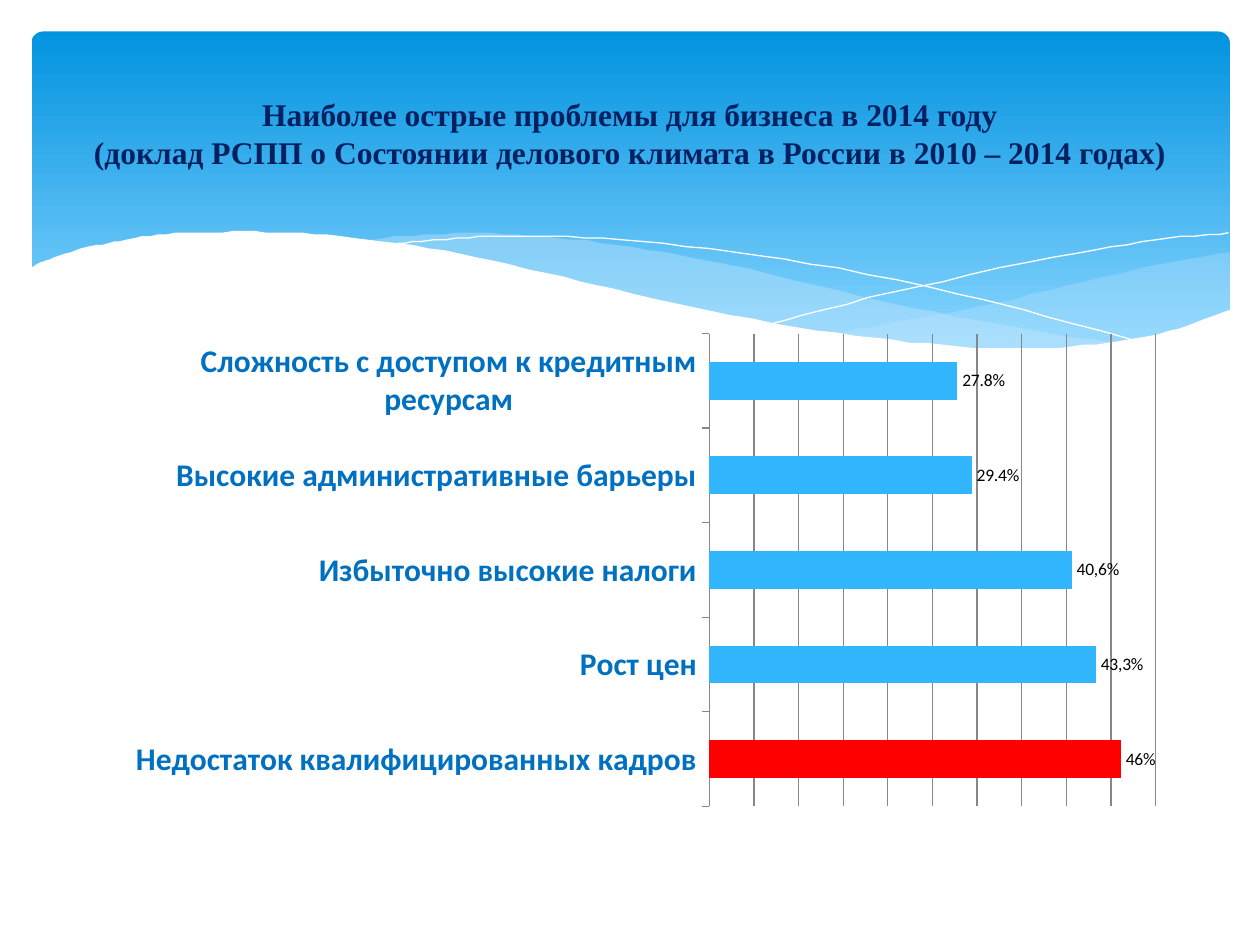
from dataclasses import dataclass
from typing import Optional

from lxml.etree import SubElement
from pptx import Presentation
from pptx.chart.data import CategoryChartData
from pptx.dml.color import RGBColor
from pptx.enum.chart import XL_CHART_TYPE, XL_LABEL_POSITION, XL_TICK_LABEL_POSITION, XL_TICK_MARK
from pptx.enum.shapes import MSO_SHAPE
from pptx.enum.text import MSO_ANCHOR, PP_ALIGN
from pptx.oxml.ns import qn
from pptx.util import Pt

Point = tuple[float, float]


@dataclass(frozen=True)
class Theme:
    header_top: str = "0293E0"
    header_bottom: str = "83D3FE"
    wave: str = "C6E7FC"
    white: str = "FFFFFF"
    title: str = "002060"
    category: str = "0070C0"
    bar: str = "31B6FD"
    highlight: str = "FF0000"
    label: str = "000000"
    grid: str = "878787"
    title_font: str = "Times New Roman"
    chart_font: str = "Calibri"
    heading_size: int = 18
    label_size: int = 10


@dataclass(frozen=True)
class Wave:
    """Smooth edges joined at sharp corners; without a fill it is an open line."""
    edges: list[list[Point]]
    fill: Optional[str] = None
    opacity: int = 100


@dataclass(frozen=True)
class Problem:
    name: str
    share: float
    label: Optional[str] = None
    highlighted: bool = False


THEME = Theme()

WAVES = [
    Wave([[(702.7, 144), (663, 151.2), (620, 160.6), (579.6, 170.6), (542, 178.6),
           (508, 185), (476, 190.8)],
          [(476, 190.8), (497.5, 193.7), (527, 197.3), (553.7, 199.4), (586, 200.2),
           (615, 198.7), (640, 195.8), (663, 190.8), (683, 185), (702.7, 177.8)]],
         THEME.wave, 29),
    Wave([[(643, 196.6), (602.6, 190.8), (558, 182.9), (508, 172.8), (453, 159.8),
           (409.7, 149.8), (370, 142.6), (334.8, 137.5), (302.4, 134.6), (273.6, 133.2),
           (247.7, 133.9), (225.4, 135.4), (206, 137.5)],
          [(206, 137.5), (246, 143.3), (291, 151.9), (323, 159.8), (381.6, 172.8),
           (432.7, 183.6), (478.8, 191.5), (520, 197.3), (556.6, 199.4), (589, 200.2),
           (617, 199.4), (643, 196.6)]],
         THEME.wave, 40),
    Wave([[(222.5, 140.4), (236, 138.2), (261.4, 136.1), (288.7, 134.6), (324, 135.4),
           (367, 138.2), (419, 144), (478.8, 153.4), (547, 167.8), (598, 180.7),
           (653, 195.8)]]),
    Wave([[(441.4, 185), (483.8, 173.5), (538.6, 160.6), (602, 146.9), (644.4, 139.7),
           (675.4, 135.4), (702, 133.2)]]),
    Wave([[(703.4, 177.1), (684, 184.3), (662.4, 190.8), (638.6, 195.1), (612, 198),
           (582.5, 199.4), (548, 198), (510, 194.4), (466.6, 188.6), (417, 180),
           (362, 167.8), (322, 158.4), (281.5, 149), (244.8, 141.8), (210, 136.8),
           (180, 133.9), (152, 132.5), (127.4, 132.5), (105, 133.2), (85.7, 134.6),
           (68.4, 137.5), (54.7, 140.4), (37.4, 144.7), (26, 149), (16.6, 153.4)],
          [(16.6, 236.9)], [(703.4, 236.9)]],
         THEME.white),
]

PROBLEMS = [
    Problem("Недостаток квалифицированных кадров", 0.461, "46%", True),
    Problem("Рост цен", 0.433, "43,3%"),
    Problem("Избыточно высокие налоги", 0.406, "40,6%"),
    Problem("Высокие административные барьеры", 0.294),
    Problem("Сложность с доступом к кредитным ресурсам", 0.278),
]

TITLE_LINES = [
    "Наиболее острые проблемы для бизнеса в 2014 году",
    "(доклад РСПП о Состоянии делового климата в России в 2010 – 2014 годах)",
]


def color(value: str) -> RGBColor:
    return RGBColor.from_string(value)


def smooth(edge: list[Point], steps: int = 4) -> list[Point]:
    """Interpolate an edge with a Catmull-Rom spline."""
    padded = [edge[0], *edge, edge[-1]]
    points = [edge[0]]
    for a, b, c, d in zip(padded, padded[1:], padded[2:], padded[3:]):
        for step in range(1, steps + 1):
            t = step / steps
            x, y = (
                (2 * q + (r - p) * t + (2 * p - 5 * q + 4 * r - s) * t**2
                 + (3 * q - p - 3 * r + s) * t**3) / 2
                for p, q, r, s in zip(a, b, c, d)
            )
            points.append((x, y))
    return points


def draw_header(slide) -> None:
    shape = slide.shapes.add_shape(
        MSO_SHAPE.ROUNDED_RECTANGLE, Pt(18), Pt(18), Pt(684.7), Pt(194.4))
    shape.adjustments[0] = 0.034
    shape.shadow.inherit = False
    shape.line.fill.background()
    shape.fill.gradient()
    shape.fill.gradient_angle = 270
    stops = zip(shape.fill.gradient_stops, (THEME.header_top, THEME.header_bottom), (0, 0.9))
    for stop, stop_color, position in stops:
        stop.color.rgb = color(stop_color)
        stop.position = position


def draw_wave(slide, wave: Wave) -> None:
    points = [point for edge in wave.edges for point in smooth(edge)]
    builder = slide.shapes.build_freeform(*points[0], scale=Pt(1))
    builder.add_line_segments(points[1:], close=wave.fill is not None)
    shape = builder.convert_to_shape()
    shape.shadow.inherit = False
    if wave.fill is None:
        shape.fill.background()
        shape.line.color.rgb = color(THEME.white)
        shape.line.width = Pt(0)
        return
    shape.line.fill.background()
    shape.fill.solid()
    shape.fill.fore_color.rgb = color(wave.fill)
    if wave.opacity < 100:
        fill_color = shape.element.spPr.find(qn("a:solidFill"))[0]
        SubElement(fill_color, qn("a:alpha"), val=str(wave.opacity * 1000))


def draw_chart(slide, problems: list[Problem]) -> None:
    data = CategoryChartData(number_format="0.0%")
    data.categories = [problem.name for problem in problems]
    data.add_series("Series 1", [problem.share for problem in problems])
    chart = slide.shapes.add_chart(
        XL_CHART_TYPE.BAR_CLUSTERED, Pt(65.5), Pt(185), Pt(607), Pt(281.5), data).chart
    chart.has_legend = False
    chart.has_title = False
    chart.font.name = THEME.chart_font
    chart.font.size = Pt(THEME.label_size)
    chart.font.color.rgb = color(THEME.label)

    category_axis = chart.category_axis
    category_axis.major_tick_mark = XL_TICK_MARK.OUTSIDE
    category_axis.tick_label_position = XL_TICK_LABEL_POSITION.NEXT_TO_AXIS
    category_axis.format.line.color.rgb = color(THEME.grid)
    category_font = category_axis.tick_labels.font
    category_font.size = Pt(THEME.heading_size)
    category_font.bold = True
    category_font.color.rgb = color(THEME.category)

    value_axis = chart.value_axis
    value_axis.visible = False
    value_axis.minimum_scale, value_axis.maximum_scale = 0, 0.5
    value_axis.major_unit = 0.05
    value_axis.has_major_gridlines = True
    value_axis.major_gridlines.format.line.color.rgb = color(THEME.grid)

    plot = chart.plots[0]
    plot.gap_width = 150
    plot.vary_by_categories = False
    series = plot.series[0]
    series.format.fill.solid()
    series.format.fill.fore_color.rgb = color(THEME.bar)
    labels = series.data_labels
    labels.show_value = True
    labels.number_format = "0.0%"
    labels.number_format_is_linked = False
    labels.position = XL_LABEL_POSITION.OUTSIDE_END
    for index, problem in enumerate(problems):
        point = series.points[index]
        if problem.highlighted:
            point.format.fill.solid()
            point.format.fill.fore_color.rgb = color(THEME.highlight)
        if problem.label:
            run = point.data_label.text_frame.paragraphs[0].add_run()
            run.text = problem.label
            run.font.size = Pt(THEME.label_size)
            point.data_label.position = XL_LABEL_POSITION.OUTSIDE_END


def write_title(slide, lines: list[str]) -> None:
    title = slide.shapes.title
    title.left, title.top, title.width, title.height = Pt(36), Pt(26.6), Pt(648), Pt(98.6)
    title.text_frame.word_wrap = True
    title.text_frame.vertical_anchor = MSO_ANCHOR.MIDDLE
    paragraph = title.text_frame.paragraphs[0]
    paragraph.alignment = PP_ALIGN.CENTER
    for index, line in enumerate(lines):
        if index:
            paragraph.add_line_break()
        run = paragraph.add_run()
        run.text = line
        run.font.name = THEME.title_font
        run.font.size = Pt(THEME.heading_size)
        run.font.bold = True
        run.font.color.rgb = color(THEME.title)
    slide.shapes.element.append(title.element)  # bring in front of the header


def main() -> None:
    presentation = Presentation()
    presentation.slide_width, presentation.slide_height = Pt(720), Pt(540)
    slide = presentation.slides.add_slide(presentation.slide_layouts[5])
    draw_header(slide)
    for wave in WAVES:
        draw_wave(slide, wave)
    draw_chart(slide, PROBLEMS)
    write_title(slide, TITLE_LINES)
    presentation.save("out.pptx")


if __name__ == "__main__":
    main()
